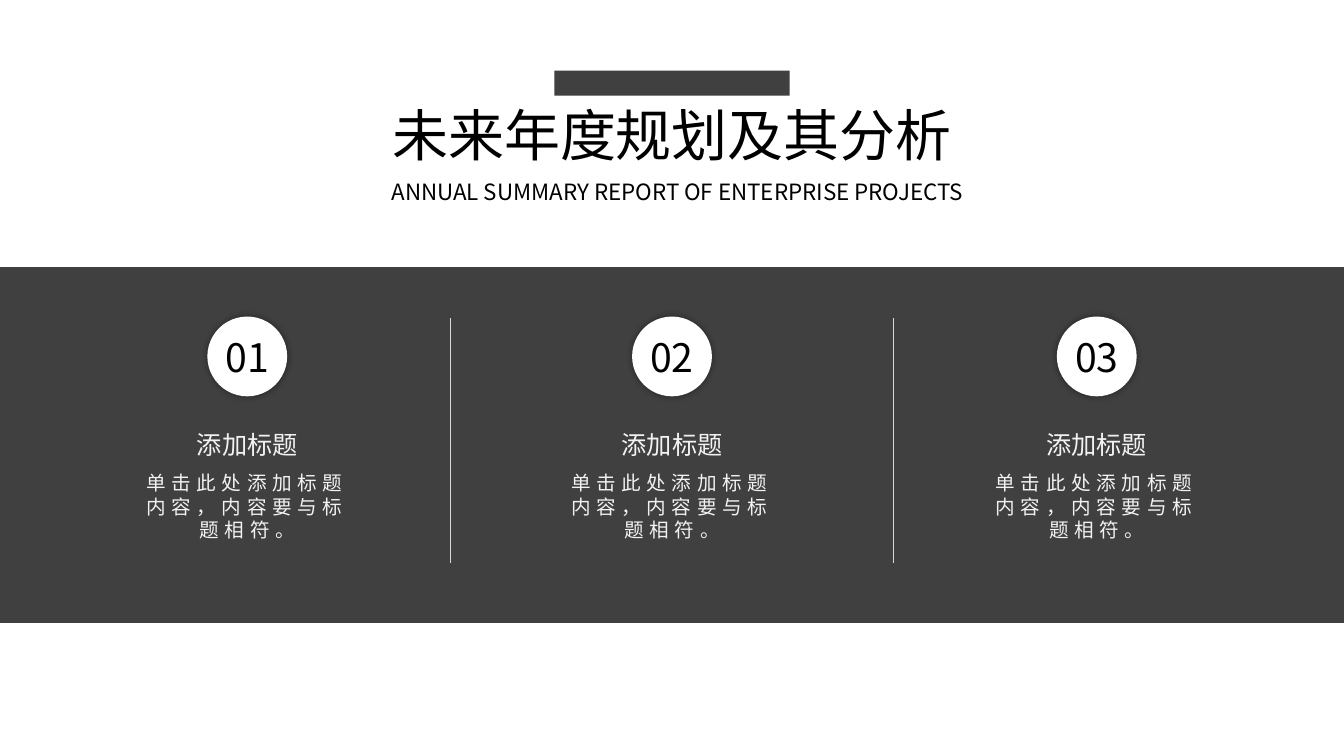
from lxml import etree
from pptx import Presentation, util as u
from pptx.dml.color import RGBColor
from pptx.enum import shapes, text
from pptx.oxml import ns, parse_xml

Pt = u.Pt
FONT = "Noto Sans CJK SC"
COLORS = {"dark": "404040", "white": "FFFFFF", "black": "000000",
          "pale": "F2F2F2", "rule": "D9D9D9"}
STYLES = {
    "title": {"size": 40, "color": "black"},
    "subtitle": {"size": 16, "color": "black"},
    "number": {"size": 28, "color": "black"},
    "heading": {"size": 18, "color": "pale"},
    "detail": {"size": 14, "color": "pale", "spacing": 4},
}
PLANS = [(number, "添加标题", "单击此处添加标题内容，内容要与标题相符。")
         for number in ("01", "02", "03")]


def rgb(name):
    return RGBColor.from_string(COLORS[name])


def write(box, words, style):
    """Fill a text shape with one centred paragraph in a named style."""
    look = STYLES[style]
    frame = box.text_frame
    frame_format = {"word_wrap": True, "auto_size": text.MSO_AUTO_SIZE.NONE,
                    "vertical_anchor": text.MSO_ANCHOR.MIDDLE,
                    "margin_left": Pt(7.2), "margin_right": Pt(7.2),
                    "margin_top": Pt(3.6), "margin_bottom": Pt(3.6)}
    for name, value in frame_format.items():
        setattr(frame, name, value)
    para = frame.paragraphs[0]
    para_format = {"alignment": text.PP_ALIGN.CENTER, "space_before": Pt(0),
                   "line_spacing": Pt(look["size"] * 1.2)}
    for name, value in para_format.items():
        setattr(para, name, value)
    span = para.add_run()
    span.text = words
    for name, value in {"name": FONT, "size": Pt(look["size"])}.items():
        setattr(span.font, name, value)
    span.font.color.rgb = rgb(look["color"])
    # East Asian font and letter spacing
    props = span.font._element
    etree.SubElement(props, ns.qn("a:ea")).set("typeface", FONT)
    if "spacing" in look:
        props.set("spc", str(look["spacing"] * 100))


def add_label(parent, left, top, width, height, words, style):
    box = parent.add_textbox(Pt(left), Pt(top), Pt(width), Pt(height))
    write(box, words, style)


def add_block(parent, kind, left, top, width, height, color):
    block = parent.add_shape(kind, Pt(left), Pt(top), Pt(width), Pt(height))
    block.shadow.inherit = False
    block.fill.solid()
    block.fill.fore_color.rgb = rgb(color)
    block.line.fill.background()
    return block


def add_glow(block):
    """Give a shape a soft shadow with no offset."""
    effects = block._element.spPr.find(ns.qn("a:effectLst"))
    effects.append(parse_xml(
        f'<a:outerShdw {ns.nsdecls("a")} blurRad="{Pt(5)}" dist="0" dir="0" '
        f'algn="ctr" rotWithShape="0"><a:srgbClr val="{COLORS["black"]}">'
        '<a:alpha val="40000"/></a:srgbClr></a:outerShdw>'))


def add_header(page, left, top, width):
    """Accent bar, title and English subtitle."""
    add_block(page.shapes, shapes.MSO_SHAPE.RECTANGLE,
              left + (width - 168) / 2, top, 168, 18, "dark")
    title = page.shapes.title
    place = {"left": left, "top": top + 18, "width": width, "height": 55.4}
    for name, value in place.items():
        setattr(title, name, Pt(value))
    write(title, "未来年度规划及其分析", "title")
    add_label(page.shapes, left + 4, top + 73.4, width, 26.6,
              "ANNUAL SUMMARY REPORT OF ENTERPRISE PROJECTS", "subtitle")


def add_divider(page, left, top, height):
    rule = page.shapes.add_connector(shapes.MSO_CONNECTOR.STRAIGHT,
                                     Pt(left), Pt(top), Pt(left), Pt(top + height))
    rule.line.color.rgb = rgb("rule")
    rule.line.width = Pt(0.5)
    etree.SubElement(rule._element.spPr, ns.qn("a:effectLst"))


def add_plan(page, left, top, width, plan):
    """One column: numbered disc, heading and detail."""
    number, heading, detail = plan
    parts = page.shapes.add_group_shape().shapes
    middle = left + width / 2
    add_label(parts, left, top + 106.6, width, 58.2, detail, "detail")
    add_label(parts, middle - 60, top + 77, width=120, height=29,
              words=heading, style="heading")
    disc = add_block(parts, shapes.MSO_SHAPE.OVAL, middle - 28.5, top, 57, 57, "white")
    add_glow(disc)
    add_label(parts, middle - 35, top + 8, 70, 41, number, "number")


def add_band(page, top, width, height):
    """Dark band with three columns and two dividers."""
    add_block(page.shapes, shapes.MSO_SHAPE.RECTANGLE, 0, top, width, height, "dark")
    for side in (-1, 1):
        add_divider(page, width / 2 + side * 158, top + 36, 175.6)
    for index, plan in enumerate(PLANS):
        middle = width / 2 + (index - 1) * 303.4
        add_plan(page, middle - 88.2, top + 35.3, 176.4, plan)


def main():
    deck = Presentation()
    deck.slide_width, deck.slide_height = Pt(960), Pt(540)
    page = deck.slides.add_slide(deck.slide_layouts[5])
    add_header(page, left=250, top=50.4, width=460)
    add_band(page, top=190.8, width=960, height=254.2)
    deck.save("out.pptx")


if __name__ == "__main__":
    main()
